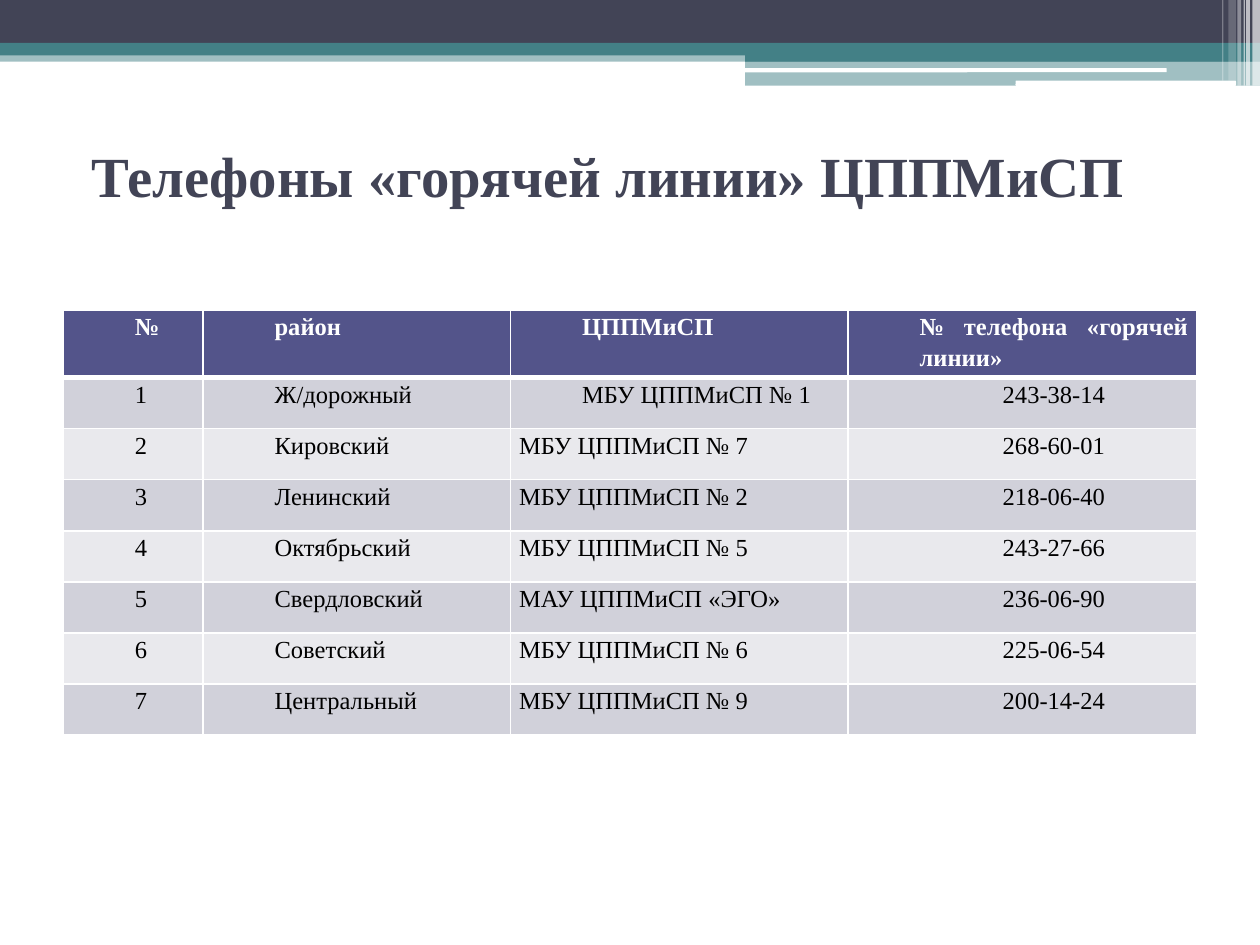
import pptx
import pptx.util
import pptx.dml.color
import pptx.enum.shapes
import pptx.enum.text
import pptx.oxml.ns
import lxml.etree

WIDTH, HEIGHT = pptx.util.Inches(10), pptx.util.Inches(7.5)
FONT = "Times New Roman"
NAVY, TEAL, WHITE = "424456", "438086", "FFFFFF"
ALIGN = pptx.enum.text.PP_ALIGN
qn = pptx.oxml.ns.qn


def paint(fill, color, opacity=100):
    fill.solid()
    fill.fore_color.rgb = pptx.dml.color.RGBColor.from_string(color)
    if opacity < 100:
        tint = fill._xPr.find(qn("a:solidFill"))[0]
        lxml.etree.SubElement(tint, qn("a:alpha"), val=str(opacity * 1000))


def share(left, top, width, height):
    """Percentages of the slide's width and height to lengths."""
    return [int(part * side / 100) for part, side
            in zip((left, top, width, height), (WIDTH, HEIGHT) * 2)]


deck = pptx.Presentation()
deck.slide_width, deck.slide_height = WIDTH, HEIGHT
slide = deck.slides.add_slide(deck.slide_layouts[6])

# Header bands, then the white stripes at the right edge
RECT = pptx.enum.shapes.MSO_SHAPE.RECTANGLE
ROUND = pptx.enum.shapes.MSO_SHAPE.ROUNDED_RECTANGLE
bands = [
    (RECT, (0, 5.33, 100, 1.2), TEAL, 50),
    (RECT, (0, 0, 100, 4.53), NAVY, 100),
    (RECT, (0, 4.53, 100, 1.33), TEAL, 100),
    (RECT, (59.15, 5.2, 40.85, 1.33), TEAL, 100),
    (RECT, (59.15, 6.4, 40.85, 2.67), TEAL, 50),
    (ROUND, (59.1, 7.2, 33.5, 0.45), WHITE, 100),
    (ROUND, (80.6, 8.53, 17.5, 0.55), WHITE, 100),
]
stripes = [(99.4, 0.6, 9.07, 65), (98.9, 0.3, 9.07, 65), (98.7, 0.1, 9.07, 60),
           (98.2, 0.3, 9.07, 40), (97.5, 0.6, 8.53, 20), (97, 0.1, 8.53, 30)]
bands += [(RECT, (left, 0, width, height), WHITE, opacity)
          for left, width, height, opacity in stripes]
for outline, place, color, opacity in bands:
    band = slide.shapes.add_shape(outline, *share(*place))
    band.shadow.inherit = False
    band.line.fill.background()
    paint(band.fill, color, opacity)

# Title, ending in a line break
title = slide.shapes.add_textbox(*share(5, 16.67, 90, 10.27)).text_frame
title.word_wrap = True
title.vertical_anchor = pptx.enum.text.MSO_ANCHOR.MIDDLE
heading = title.paragraphs[0]
for words, font, size, bold in ((" ", "Lato", 36, False),
                                ("Телефоны «горячей линии» ЦППМиСП", FONT, 32.4, True)):
    run = heading.add_run()
    run.text = words
    run.font.name, run.font.size, run.font.bold = font, pptx.util.Pt(size), bold
    paint(run.font.fill, NAVY)
heading.add_line_break()
lxml.etree.SubElement(heading._p.find(qn("a:br")), qn("a:rPr"), sz="3240")
lxml.etree.SubElement(heading._p, qn("a:endParaRPr"), sz="3240")

# Hotline table
rows = [
    ("№", "район", "ЦППМиСП ", "№ телефона «горячей линии»"),
    ("1", "Ж/дорожный", "МБУ ЦППМиСП № 1", "243-38-14"),
    ("2", "Кировский", "МБУ ЦППМиСП № 7", "268-60-01"),
    ("3", "Ленинский", "МБУ ЦППМиСП № 2", "218-06-40"),
    ("4", "Октябрьский", "МБУ ЦППМиСП № 5", "243-27-66"),
    ("5", "Свердловский", "МАУ ЦППМиСП «ЭГО»", "236-06-90"),
    ("6", "Советский", "МБУ ЦППМиСП № 6", "225-06-54"),
    ("7", "Центральный", "МБУ ЦППМиСП № 9", "200-14-24"),
]
row_share = 5.41
hotlines = slide.shapes.add_table(
    len(rows), 4, *share(5, 32.8, 90, row_share * len(rows))).table
for column, width in zip(hotlines.columns, (11.1, 24.4, 26.8, 27.7)):
    column.width = int(WIDTH * width / 100)

body_aligns = (ALIGN.JUSTIFY, ALIGN.JUSTIFY, ALIGN.LEFT, ALIGN.CENTER)
for r, entries in enumerate(rows):
    header = r == 0
    for c, entry in enumerate(entries):
        cell = hotlines.cell(r, c)
        cell.margin_left = cell.margin_right = pptx.util.Inches(0.07)
        cell.margin_top = cell.margin_bottom = 0
        cell.text_frame.text = entry
        line = cell.text_frame.paragraphs[0]
        line.alignment = ALIGN.JUSTIFY if header else body_aligns[c]
        line.line_spacing = 1.15
        if c != 2 or r < 2:
            line._p.get_or_add_pPr().set("marL", str(pptx.util.Inches(0.5)))
        font = line.runs[0].font
        font.name, font.size, font.bold = FONT, pptx.util.Pt(14), header
        paint(font.fill, WHITE if header else "000000")

        # White borders come before the fill in the cell's properties
        properties = cell._tc.get_or_add_tcPr()
        for side in ("lnL", "lnR", "lnT", "lnB"):
            thick = (header and side == "lnB") or (r == 1 and side == "lnT")
            border = lxml.etree.SubElement(properties, qn("a:" + side),
                                           w=str(pptx.util.Pt(3 if thick else 1)))
            solid = lxml.etree.SubElement(border, qn("a:solidFill"))
            lxml.etree.SubElement(solid, qn("a:srgbClr"), val=WHITE)
        paint(cell.fill, "53548A" if header else ("E9E9ED", "D1D1DA")[r % 2])

deck.save("out.pptx")
